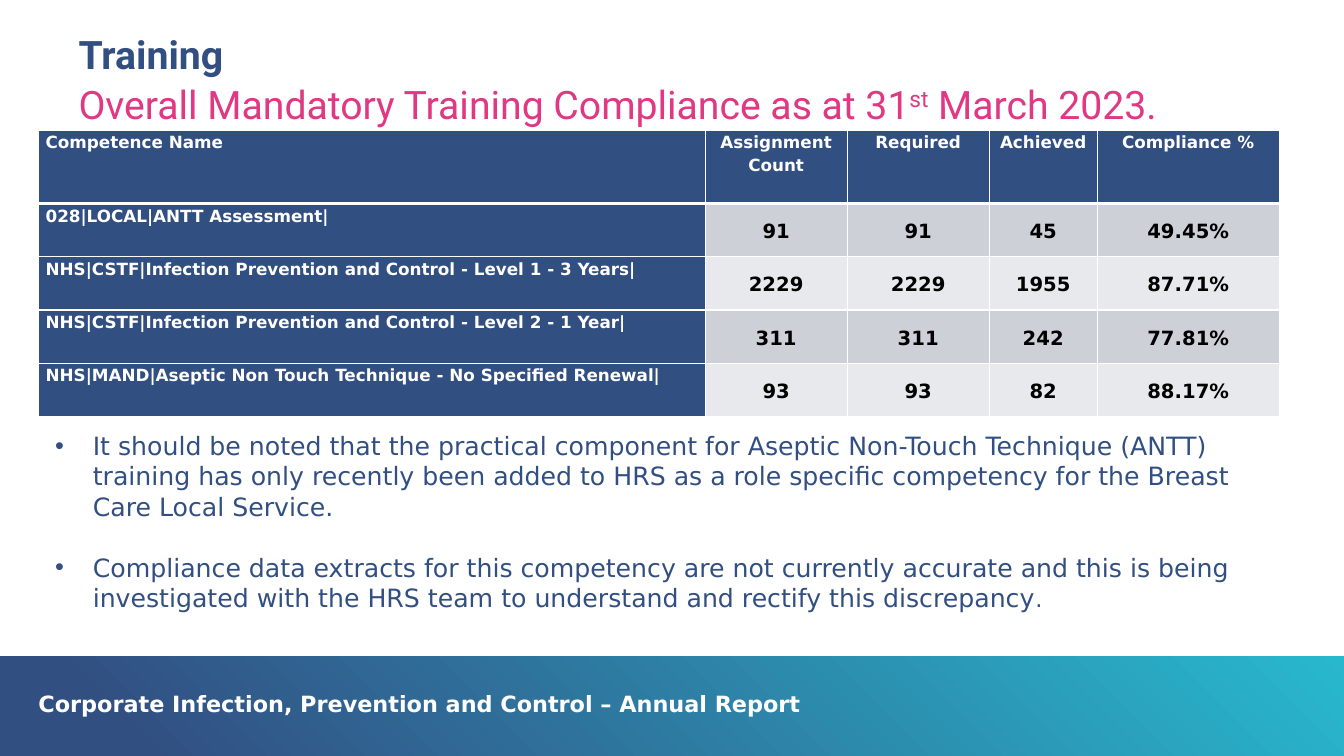
from dataclasses import dataclass

from lxml import etree
from pptx import Presentation
from pptx.dml.color import RGBColor
from pptx.enum import shapes, text
from pptx.oxml import ns
from pptx.util import Cm, Pt

NAVY, TEAL, PINK, WHITE, BLACK = "324F82", "28B8CE", "E03882", "FFFFFF", "000000"
BANDS = ("CED0D8", "E8E9ED")
BODY_FONT, TITLE_FONT = "DejaVu Sans", "Roboto"
COLUMN_WIDTHS = (16.8, 3.58, 3.58, 2.72, 4.59)
HEADER_HEIGHT, ROW_HEIGHT = 1.85, 1.34
HEADERS = ("Competence Name", "Assignment Count", "Required", "Achieved", "Compliance %")


@dataclass
class Competence:
    name: str
    assigned: int
    required: int
    achieved: int
    compliance: str

    def values(self) -> tuple:
        return (self.name, self.assigned, self.required, self.achieved, self.compliance)


@dataclass
class Line:
    left: float
    top: float
    width: float
    height: float
    runs: tuple
    size: float
    font: str
    color: str
    bold: bool = False


COMPETENCES = (
    Competence("028|LOCAL|ANTT Assessment|", 91, 91, 45, "49.45%"),
    Competence("NHS|CSTF|Infection Prevention and Control - Level 1 - 3 Years|", 2229, 2229, 1955, "87.71%"),
    Competence("NHS|CSTF|Infection Prevention and Control - Level 2 - 1 Year|", 311, 311, 242, "77.81%"),
    Competence("NHS|MAND|Aseptic Non Touch Technique - No Specified Renewal|", 93, 93, 82, "88.17%"),
)
LINES = (
    Line(0.97, 17.48, 25.88, 0.61, ("Corporate Infection, Prevention and Control – Annual Report",),
         16, BODY_FONT, WHITE, True),
    Line(1.98, 0.91, 29.9, 1.09, ("Training",), 28, TITLE_FONT, NAVY, True),
    Line(1.98, 2.16, 29.9, 1.09, ("Overall Mandatory Training Compliance as at 31", "st", " March 2023."),
         28, TITLE_FONT, PINK),
)
NOTES = (
    ("It should be noted that the practical component for Aseptic Non-Touch Technique (ANTT) training has only "
     "recently been added to HRS as a role specific competency for the Breast Care Local Service.",),
    ("Compliance data extracts for this competency are not currently accurate and this is being investigated "
     "with the HRS team to understand and rectify this discrepancy", "."),
)


def rgb(value: str) -> RGBColor:
    return RGBColor.from_string(value)


def style(r, size: float, font: str, color: str, bold: bool = False) -> None:
    r.font.size = Pt(size)
    r.font.name = font
    r.font.bold = bold
    r.font.color.rgb = rgb(color)


def add_box(s, left: float, top: float, width: float, height: float):
    tf = s.shapes.add_textbox(Cm(left), Cm(top), Cm(width), Cm(height)).text_frame
    tf.word_wrap = True
    return tf


def draw_footer(s) -> None:
    sp = s.shapes.add_shape(shapes.MSO_SHAPE.RECTANGLE, 0, Cm(16.54), Cm(33.87), Cm(2.51))
    sp.shadow.inherit = False
    sp.line.fill.background()
    sp.fill.gradient()
    sp.fill.gradient_angle = 45
    for stop, position, color in zip(sp.fill.gradient_stops, (0.1, 1), (NAVY, TEAL)):
        stop.position = position
        stop.color.rgb = rgb(color)


def draw_line(s, line: Line) -> None:
    tf = add_box(s, line.left, line.top, line.width, line.height)
    tf.margin_left = tf.margin_top = tf.margin_right = tf.margin_bottom = 0
    p = tf.paragraphs[0]
    p.line_spacing = 0.9
    for content in line.runs:
        r = p.add_run()
        r.text = content
        style(r, line.size, line.font, line.color, line.bold)
        if content == "st":
            r.font._element.set("baseline", "30000")


def set_borders(cell, row: int) -> None:
    widths = {"L": 1, "R": 1, "T": 3 if row == 1 else 1, "B": 3 if row == 0 else 1}
    tc_pr = cell._tc.get_or_add_tcPr()
    for index, (side, width) in enumerate(widths.items()):
        ln = etree.Element(ns.qn(f"a:ln{side}"), w=str(Pt(width)))
        fill = etree.SubElement(ln, ns.qn("a:solidFill"))
        etree.SubElement(fill, ns.qn("a:srgbClr"), val=WHITE)
        tc_pr.insert(index, ln)


def draw_cell(cell, row: int, column: int, value: str) -> None:
    heading = row == 0 or column == 0
    cell.margin_left = cell.margin_right = Cm(0.18)
    cell.margin_top = cell.margin_bottom = 0
    cell.vertical_anchor = text.MSO_ANCHOR.TOP if heading else text.MSO_ANCHOR.MIDDLE
    cell.fill.solid()
    cell.fill.fore_color.rgb = rgb(NAVY if heading else BANDS[(row - 1) % 2])
    set_borders(cell, row)
    cell.text_frame.text = value
    p = cell.text_frame.paragraphs[0]
    p.line_spacing = 1.15
    p.alignment = text.PP_ALIGN.CENTER if column else text.PP_ALIGN.LEFT
    style(p.runs[0], 12 if heading else 14, BODY_FONT, WHITE if heading else BLACK, True)


def draw_table(s) -> None:
    rows = [HEADERS] + [c.values() for c in COMPETENCES]
    height = HEADER_HEIGHT + ROW_HEIGHT * len(COMPETENCES)
    table = s.shapes.add_table(len(rows), len(HEADERS), Cm(0.97), Cm(3.28),
                               Cm(sum(COLUMN_WIDTHS)), Cm(height)).table
    table.first_col = True
    for column, width in zip(table.columns, COLUMN_WIDTHS):
        column.width = Cm(width)
    for i, values in enumerate(rows):
        table.rows[i].height = Cm(ROW_HEIGHT if i else HEADER_HEIGHT)
        for j, value in enumerate(values):
            draw_cell(table.cell(i, j), i, j, str(value))


def draw_notes(s) -> None:
    tf = add_box(s, 1.14, 10.72, 30.73, 4.88)
    for i, parts in enumerate(NOTES):
        p = tf.add_paragraph() if i else tf.paragraphs[0]
        p_pr = p._p.get_or_add_pPr()
        p_pr.set("marL", str(Cm(0.95)))
        p_pr.set("indent", str(-Cm(0.95)))
        if i:
            p.space_before = Pt(22)
        etree.SubElement(p_pr, ns.qn("a:buFont"), typeface="Arial")
        etree.SubElement(p_pr, ns.qn("a:buChar"), char="•")
        for content, size in zip(parts, (18, 16)):
            r = p.add_run()
            r.text = content
            style(r, size, BODY_FONT, NAVY)


def main() -> None:
    prs = Presentation()
    prs.slide_width, prs.slide_height = Cm(33.87), Cm(19.05)
    s = prs.slides.add_slide(prs.slide_layouts[6])
    draw_footer(s)
    draw_table(s)
    for line in LINES:
        draw_line(s, line)
    draw_notes(s)
    prs.save("out.pptx")


if __name__ == "__main__":
    main()
